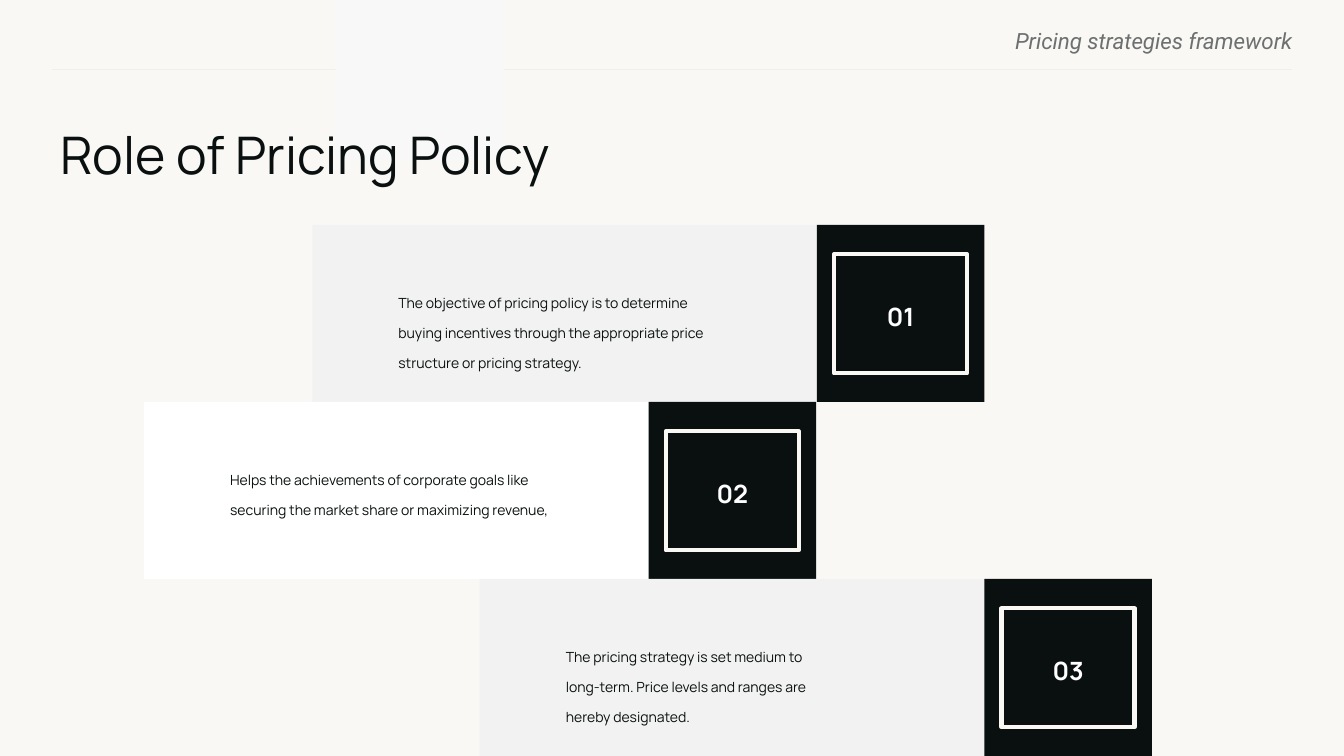
from lxml import etree
from pptx import Presentation
from pptx.dml.color import RGBColor
from pptx.enum import shapes, text
from pptx.oxml import ns
from pptx.util import Cm, Pt

CREAM = RGBColor(0xF9, 0xF8, 0xF5)
INK = RGBColor(0x09, 0x10, 0x0F)
WHITE = RGBColor(0xFF, 0xFF, 0xFF)
PALE = RGBColor(0xF2, 0xF2, 0xF2)
STRIP = RGBColor(0xF8, 0xF8, 0xF8)
RULE = RGBColor(0xEF, 0xEF, 0xEF)
GRAY = RGBColor(0x6C, 0x70, 0x6F)

ROW_TOP, ROW_HEIGHT = 5.67, 4.46
PANEL_WIDTH, TILE_WIDTH = 12.72, 4.22

# number, panel left, panel colour, text width, text
ROLES = [
    ("01", 7.87, PALE, 8.33,
     "The objective of pricing policy is to determine buying incentives "
     "through the appropriate price structure or pricing strategy."),
    ("02", 3.63, WHITE, 8.92,
     "Helps the achievements of corporate goals like securing the market "
     "share or maximizing revenue,"),
    ("03", 12.09, PALE, 6.35,
     "The pricing strategy is set medium to long-term. Price levels and "
     "ranges are hereby designated."),
]


class SlideBuilder:
    def __init__(self, slide, font="Manrope"):
        self.slide = slide
        self.font = font
        slide.background.fill.solid()
        slide.background.fill.fore_color.rgb = CREAM

    def set_text(self, shape, words, size, color, align=text.PP_ALIGN.LEFT,
                 spacing=1.0, font=None, bold=False, italic=False):
        """Put one formatted paragraph into a shape without margins."""
        frame = shape.text_frame
        frame.word_wrap = True
        frame.margin_left = frame.margin_right = 0
        frame.margin_top = frame.margin_bottom = 0
        frame.text = words
        para = frame.paragraphs[0]
        para.alignment = align
        para.line_spacing = spacing
        span = para.runs[0].font
        span.name = font or self.font
        span.size = Pt(size)
        span.color.rgb = color
        span.bold = bold
        span.italic = italic

    def text_box(self, left, top, width, height, words, size, color, **style):
        box = self.slide.shapes.add_textbox(
            Cm(left), Cm(top), Cm(width), Cm(height))
        self.set_text(box, words, size, color, **style)
        return box

    def rectangle(self, left, top, width, height, fill=None, line=None):
        box = self.slide.shapes.add_shape(
            shapes.MSO_SHAPE.RECTANGLE,
            Cm(left), Cm(top), Cm(width), Cm(height))
        box.shadow.inherit = False
        if fill is None:
            box.fill.background()
        else:
            box.fill.solid()
            box.fill.fore_color.rgb = fill
        if line is None:
            box.line.fill.background()
        else:
            box.line.color.rgb = line
            box.line.width = Pt(3)
        return box

    def rule(self, left, right, top):
        line = self.slide.shapes.add_connector(
            shapes.MSO_CONNECTOR.STRAIGHT,
            Cm(left), Cm(top), Cm(right), Cm(top))
        line.line.color.rgb = RULE
        line.line.width = Pt(0.75)
        etree.SubElement(line._element.spPr, ns.qn("a:effectLst"))

    def role(self, top, number, left, color, text_width, words):
        """Draw a panel with its text and the framed number beside it."""
        self.rectangle(left, top, PANEL_WIDTH, ROW_HEIGHT, fill=color)
        tile = self.rectangle(left + PANEL_WIDTH, top, TILE_WIDTH, ROW_HEIGHT,
                              fill=INK)
        self.set_text(tile, number, 18, WHITE, align=text.PP_ALIGN.CENTER,
                      spacing=1.2, bold=True)
        tile.text_frame.vertical_anchor = text.MSO_ANCHOR.MIDDLE
        body = self.text_box(left + 2.17, top + 1.41, text_width, 1.96,
                             words, 10, INK, spacing=1.8)
        body.text_frame.auto_size = text.MSO_AUTO_SIZE.SHAPE_TO_FIT_TEXT
        self.rectangle(left + 13.15, top + 0.74, 3.35, 3, line=CREAM)


def main():
    deck = Presentation()
    deck.slide_width, deck.slide_height = Cm(33.87), Cm(19.05)
    page = SlideBuilder(deck.slides.add_slide(deck.slide_layouts[6]))

    page.text_box(19.51, 0.69, 13.06, 0.61, "Pricing strategies framework",
                  16, GRAY, align=text.PP_ALIGN.RIGHT, font="Roboto",
                  italic=True)
    page.rule(1.32, 32.56, 1.75)
    page.rectangle(8.46, 0, 4.24, 4.04, fill=STRIP)
    for index, role in enumerate(ROLES):
        page.role(ROW_TOP + index * ROW_HEIGHT, *role)
    page.text_box(1.52, 3.1, 31.24, 1.73, "Role of Pricing Policy", 37, INK)

    deck.save("out.pptx")


if __name__ == "__main__":
    main()
